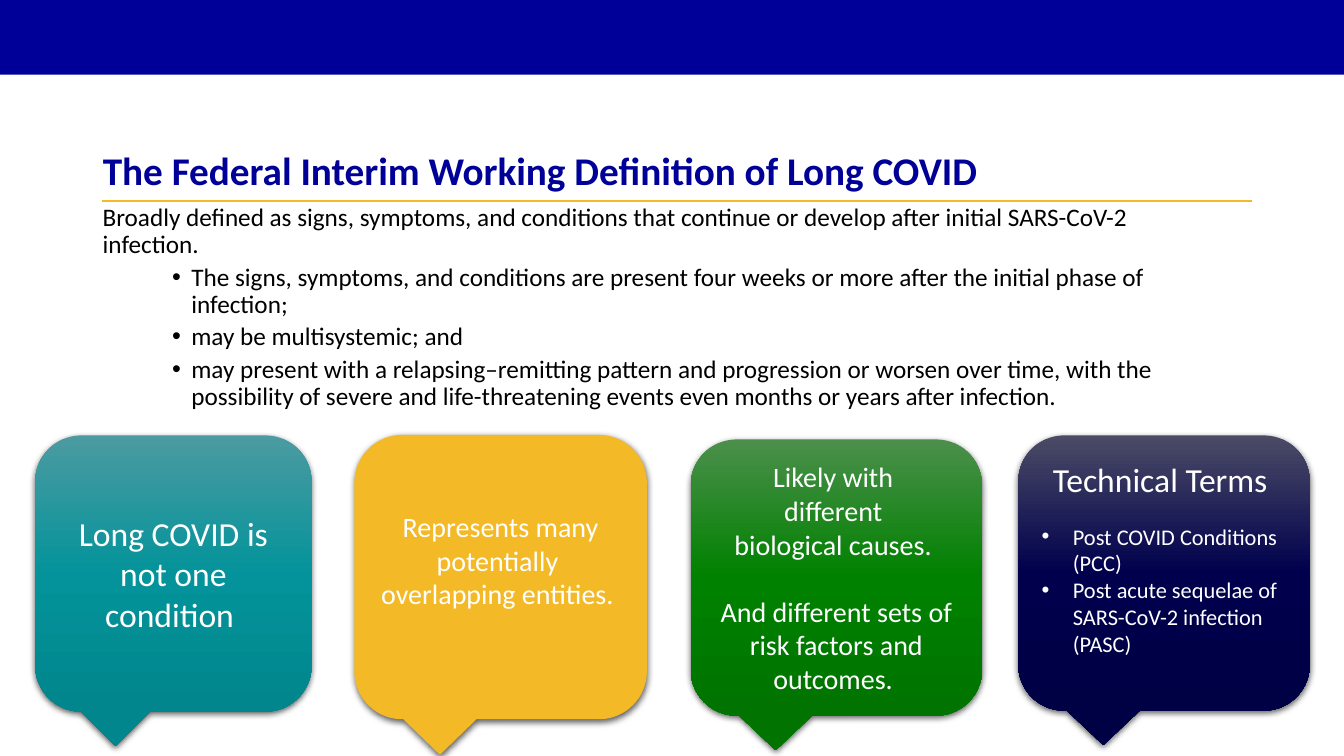
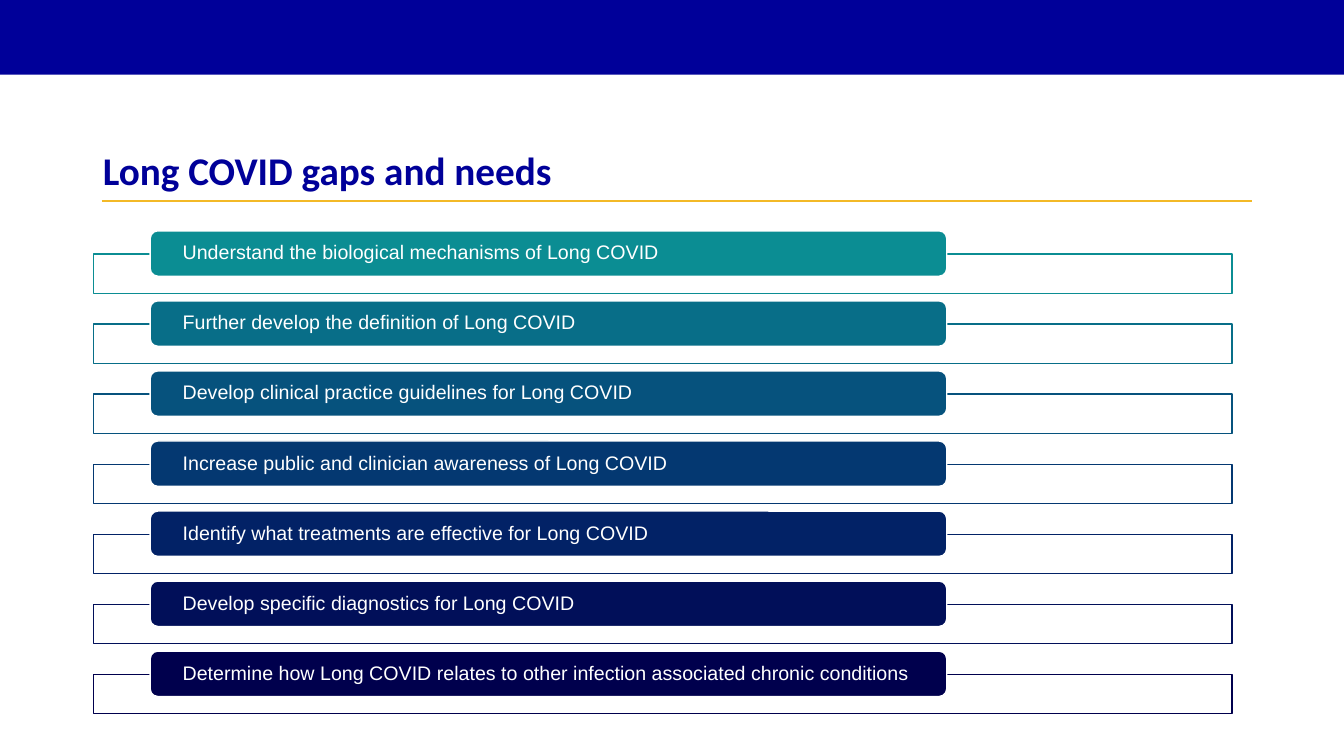
"""Build two slides on the definition of Long COVID and its open needs."""
from copy import deepcopy
from dataclasses import dataclass

from lxml import etree
from pptx import Presentation
from pptx.dml.color import RGBColor
from pptx.enum.shapes import MSO_CONNECTOR, MSO_SHAPE
from pptx.enum.text import MSO_ANCHOR, MSO_AUTO_SIZE, PP_ALIGN
from pptx.oxml.ns import qn
from pptx.presentation import Presentation as Deck
from pptx.shapes.autoshape import Shape
from pptx.slide import Slide
from pptx.text.text import TextFrame
from pptx.util import Inches, Pt

RECTANGLE = MSO_SHAPE.RECTANGLE
ROUNDED = MSO_SHAPE.ROUNDED_RECTANGLE
CALLOUT = MSO_SHAPE.ROUNDED_RECTANGULAR_CALLOUT
STRAIGHT = MSO_CONNECTOR.STRAIGHT
LEFT, CENTER = PP_ALIGN.LEFT, PP_ALIGN.CENTER
TOP, MIDDLE, BOTTOM = MSO_ANCHOR.TOP, MSO_ANCHOR.MIDDLE, MSO_ANCHOR.BOTTOM
TITLE_ONLY = 5


@dataclass(frozen=True)
class Theme:
    """Colours, fonts and type sizes of the deck."""
    navy: str = "000099"
    gold: str = "F3B927"
    white: str = "FFFFFF"
    black: str = "000000"
    font: str = "Calibri"
    row_font: str = "Arial"
    title: int = 28
    lead: int = 24
    callout: int = 20
    body: int = 18
    term: int = 16
    row: int = 14


THEME = Theme()


@dataclass(frozen=True)
class Line:
    """One paragraph with its size, spacing and optional bullet indent."""
    text: str
    size: int
    before: float = 0
    spacing: float = 1.0
    align: PP_ALIGN = LEFT
    bullet_left: float = 0
    hanging: float = 0


@dataclass(frozen=True)
class Callout:
    """A speech callout with one flat or three graded colours."""
    left: float
    top: float
    width: float
    height: float
    colors: tuple[str, ...]
    lines: tuple[Line, ...]
    bottom_inset: float = 0.05


@dataclass(frozen=True)
class Need:
    """One row of the list of needs."""
    text: str
    color: str


def centered(text: str, size: int = THEME.callout, before: float = 0) -> Line:
    """Return a centred callout paragraph."""
    return Line(text, size, before, align=CENTER)


def body_bullet(text: str) -> Line:
    """Return a bullet of the definition."""
    return Line(text, THEME.body, 3.8, 0.9, bullet_left=0.88, hanging=0.19)


def term_bullet(text: str, before: float = 0) -> Line:
    """Return a bullet of the technical terms."""
    return Line(text, THEME.term, before, bullet_left=0.31, hanging=0.31)


DEFINITION = (
    Line("Broadly defined as signs, symptoms, and conditions that continue or develop "
         "after initial SARS-CoV-2 infection. ", THEME.body, spacing=0.9),
    body_bullet("The signs, symptoms, and conditions are present four weeks or more "
                "after the initial phase of infection; "),
    body_bullet("may be multisystemic; and "),
    body_bullet("may present with a relapsing–remitting pattern and progression or worsen "
                "over time, with the possibility of severe and life-threatening events "
                "even months or years after infection. "),
)

CALLOUTS = (
    Callout(6.85, 4.36, 2.89, 2.74, ("4B8F4B", "008100", "007300"), (
        centered("Likely with "),
        centered("different "),
        centered("biological causes. "),
        centered("And different sets of risk factors and outcomes. ", before=24),
    )),
    Callout(10.1, 4.32, 2.89, 2.73, ("4B4B66", "00004D", "000044"), (
        centered("Technical Terms ", THEME.lead),
        term_bullet("Post COVID Conditions (PCC)", 17),
        term_bullet("Post acute sequelae of SARS-CoV-2 infection (PASC)"),
    ), 0.35),
    Callout(0.35, 4.32, 2.74, 2.74, ("4B9BA1", "04939A", "00868C"), (
        centered("Long COVID is not one condition ", THEME.lead),
    )),
    Callout(3.52, 4.32, 2.89, 2.81, (THEME.gold,), (
        centered("Represents many potentially "),
        centered("overlapping entities. "),
    ), 0.39),
)

NEEDS = (
    Need("Understand the biological mechanisms of Long COVID", "0B8D93"),
    Need("Further develop the definition of Long COVID", "086E88"),
    Need("Develop clinical practice guidelines for Long COVID", "06527D"),
    Need("Increase public and clinician awareness of Long COVID", "043871"),
    Need("Identify what treatments are effective for Long COVID", "022266"),
    Need("Develop specific diagnostics for Long COVID", "010F59"),
    Need("Determine how Long COVID relates to other infection associated chronic conditions",
         "00004D"),
)
FIRST_ROW, LAST_ROW = 2.29, 6.46
ROW_PITCH = (LAST_ROW - FIRST_ROW) / (len(NEEDS) - 1)


def rgb(color: str) -> RGBColor:
    """Return a colour from its hexadecimal form."""
    return RGBColor.from_string(color)


def write(frame: TextFrame, lines: tuple[Line, ...], color: str, anchor: MSO_ANCHOR,
          font: str = THEME.font, bold: bool = False) -> None:
    """Fill a text frame with styled paragraphs."""
    frame.word_wrap = True
    frame.auto_size = MSO_AUTO_SIZE.NONE
    frame.vertical_anchor = anchor
    for index, line in enumerate(lines):
        paragraph = frame.add_paragraph() if index else frame.paragraphs[0]
        if line.hanging:
            properties = paragraph._p.get_or_add_pPr()
            properties.set("marL", str(Inches(line.bullet_left)))
            properties.set("indent", str(-Inches(line.hanging)))
            etree.SubElement(properties, qn("a:buFont"), typeface="Arial")
            etree.SubElement(properties, qn("a:buChar"), char="•")
        paragraph.alignment = line.align
        paragraph.line_spacing = line.spacing
        paragraph.space_before = Pt(line.before)
        run = paragraph.add_run()
        run.text = line.text
        run.font.name = font
        run.font.size = Pt(line.size)
        run.font.bold = bold
        run.font.color.rgb = rgb(color)


def add_box(slide: Slide, kind: MSO_SHAPE, left: float, top: float, width: float,
            height: float, fill: str, line: str | None = None, weight: float = 1) -> Shape:
    """Draw a flat preset shape without a shadow."""
    shape = slide.shapes.add_shape(kind, Inches(left), Inches(top), Inches(width), Inches(height))
    shape.shadow.inherit = False
    shape.fill.solid()
    shape.fill.fore_color.rgb = rgb(fill)
    if line:
        shape.line.color.rgb = rgb(line)
        shape.line.width = Pt(weight)
    else:
        shape.line.fill.background()
    return shape


def add_gradient(shape: Shape, colors: tuple[str, ...]) -> None:
    """Grade a shape evenly from top to bottom."""
    shape.fill.gradient()
    shape.fill.gradient_angle = 270
    stop_list = shape._element.spPr.find(qn("a:gradFill")).find(qn("a:gsLst"))
    while len(stop_list) < len(colors):
        stop_list.append(deepcopy(stop_list[0]))
    for index, (stop, color) in enumerate(zip(shape.fill.gradient_stops, colors)):
        stop.color.rgb = rgb(color)
        stop.position = index / (len(colors) - 1)


def add_shadow(shape: Shape) -> None:
    """Cast a soft shadow below a shape."""
    effects = shape._element.spPr.find(qn("a:effectLst"))
    shadow = etree.SubElement(effects, qn("a:outerShdw"), blurRad=str(Pt(4.5)),
                              dist=str(Pt(1.5)), dir="5400000", rotWithShape="0")
    color = etree.SubElement(shadow, qn("a:srgbClr"), val=THEME.black)
    etree.SubElement(color, qn("a:alpha"), val="63000")


def add_titled_slide(presentation: Deck, title: str) -> Slide:
    """Add a slide with the band, the title and the gold rule."""
    slide = presentation.slides.add_slide(presentation.slide_layouts[TITLE_ONLY])
    add_box(slide, RECTANGLE, 0, 0, 13.33, 0.74, THEME.navy)
    rule = slide.shapes.add_connector(STRAIGHT, Inches(1.01), Inches(1.99),
                                      Inches(12.42), Inches(1.99))
    rule.line.color.rgb = rgb(THEME.gold)
    rule.line.width = Pt(1.5)
    etree.SubElement(rule._element.spPr, qn("a:effectLst"))
    heading = slide.shapes.title
    heading.left, heading.top = Inches(0.92), Inches(1.32)
    heading.width, heading.height = Inches(11.5), Inches(0.65)
    write(heading.text_frame, (Line(title, THEME.title, spacing=0.9),), THEME.navy, BOTTOM,
          bold=True)
    return slide


def add_callout(slide: Slide, callout: Callout) -> None:
    """Draw one callout with its text."""
    flat = len(callout.colors) == 1
    shape = add_box(slide, CALLOUT, callout.left, callout.top, callout.width, callout.height,
                    callout.colors[0], callout.colors[0] if flat else None, 0.75)
    if not flat:
        add_gradient(shape, callout.colors)
    add_shadow(shape)
    shape.text_frame.margin_bottom = Inches(callout.bottom_inset)
    write(shape.text_frame, callout.lines, THEME.white, MIDDLE)


def add_need(slide: Slide, need: Need, top: float) -> None:
    """Draw one outlined row with its coloured label."""
    add_box(slide, RECTANGLE, 0.93, top + 0.23, 11.29, 0.39, THEME.white, need.color)
    label = add_box(slide, ROUNDED, 1.49, top, 7.9, 0.45, need.color, THEME.white)
    frame = label.text_frame
    frame.margin_left = frame.margin_right = Inches(0.3)
    frame.margin_top = frame.margin_bottom = 0
    write(frame, (Line(need.text, THEME.row, spacing=0.9),), THEME.white, MIDDLE, THEME.row_font)


def build_definition(presentation: Deck) -> None:
    """Build the slide with the definition and four callouts."""
    slide = add_titled_slide(presentation, "The Federal Interim Working Definition of Long COVID")
    body = slide.shapes.add_textbox(Inches(0.92), Inches(1.98), Inches(11.33), Inches(2.23))
    write(body.text_frame, DEFINITION, THEME.black, TOP)
    for callout in CALLOUTS:
        add_callout(slide, callout)


def build_needs(presentation: Deck) -> None:
    """Build the slide that lists the needs."""
    slide = add_titled_slide(presentation, "Long COVID gaps and needs")
    for index, need in enumerate(NEEDS):
        add_need(slide, need, FIRST_ROW + index * ROW_PITCH)


def main() -> None:
    """Build and save the presentation."""
    presentation = Presentation()
    presentation.slide_width, presentation.slide_height = Inches(13.33), Inches(7.5)
    build_definition(presentation)
    build_needs(presentation)
    presentation.save("out.pptx")


if __name__ == "__main__":
    main()
